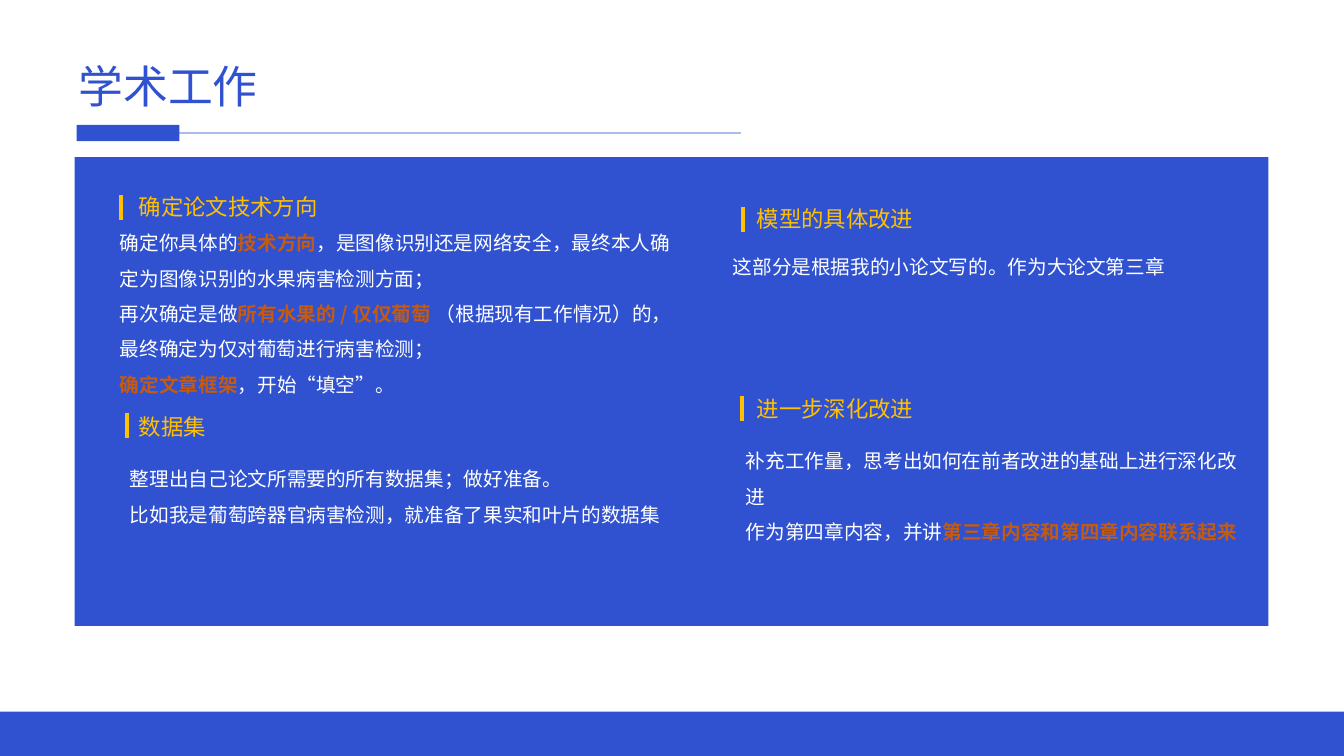
from lxml import etree
from pptx import Presentation
from pptx.dml.color import RGBColor
from pptx.enum.shapes import MSO_CONNECTOR as Conn, MSO_SHAPE as Shape
from pptx.enum.text import MSO_AUTO_SIZE as Fit
from pptx.oxml.ns import qn
from pptx.util import Inches, Pt

FONT = "Noto Sans CJK SC"
COLORS = {"blue": "3052D0", "pale": "ACBAEC", "gold": "FFC000",
          "white": "FFFFFF", "rust": "C55A11"}

# Body text: paragraphs of (text, highlighted) parts; "\n" is a line break.
TITLE = "学术工作"
BANDS = [(0.76, 1.24, 1.02, 0.16), (0.74, 1.56, 11.84, 4.65), (0, 7.06, 13.33, 0.44)]
TOPICS = [
    {"head": "确定论文技术方向", "at": (1.28, 1.87, 2.22, 0.32), "mark": (1.2, 1.93),
     "area": (1.09, 2.13, 5.81, 1.87),
     "body": [[("确定你具体的", False), ("技术方向", True),
               ("，是图像识别还是网络安全，最终本人确定为图像识别的水果病害检测方面；\n再次确定是做", False),
               ("所有水果的 / 仅仅葡萄 ", True),
               ("（根据现有工作情况）的，最终确定为仅对葡萄进行病害检测；", False)],
              [("确定文章框架", True), ("，开始“填空”。", False)]]},
    {"head": "数据集", "at": (1.28, 4.05, 2.05, 0.37), "mark": (1.26, 4.1),
     "area": (1.19, 4.47, 5.81, 0.81),
     "body": [[("整理出自己论文所需要的所有数据集；做好准备。", False)],
              [("比如我是葡萄跨器官病害检测，就准备了果实和叶片的数据集", False)]]},
    {"head": "模型的具体改进", "at": (7.41, 1.99, 2.76, 0.37), "mark": (7.37, 2.05),
     "area": (7.17, 2.36, 5.26, 0.45),
     "body": [[("这部分是根据我的小论文写的。作为大论文第三章", False)]]},
    {"head": "进一步深化改进", "at": (7.41, 3.87, 2.23, 0.37), "mark": (7.36, 3.93),
     "area": (7.3, 4.29, 5.26, 0.81),
     "body": [[("补充工作量，思考出如何在前者改进的基础上进行深化改进", False)],
              [("作为第四章内容，并讲", False), ("第三章内容和第四章内容联系起来", True)]]},
]
MARK = 0.25


def rgb(name):
    return RGBColor.from_string(COLORS[name])


def add_band(slide, box):
    band = slide.shapes.add_shape(Shape.RECTANGLE, *map(Inches, box))
    band.shadow.inherit = False
    band.fill.solid()
    band.fill.fore_color.rgb = rgb("blue")
    band.line.fill.background()


def add_line(slide, start, end, color, width):
    line = slide.shapes.add_connector(Conn.STRAIGHT, *map(Inches, start + end))
    line.line.color.rgb = rgb(color)
    line.line.width = Pt(width)
    etree.SubElement(line._element.spPr, qn("a:effectLst"))


def add_text(slide, box, paras, size, color, space=None):
    frame = slide.shapes.add_textbox(*map(Inches, box)).text_frame
    frame.word_wrap = True
    frame.auto_size = Fit.SHAPE_TO_FIT_TEXT
    for i, parts in enumerate(paras):
        para = frame.add_paragraph() if i else frame.paragraphs[0]
        para.line_spacing = space
        for text, strong in parts:
            for j, piece in enumerate(text.split("\n")):
                if j:
                    para.add_line_break()
                run = para.add_run()
                run.text = piece
                font = run.font
                font.size, font.name, font.bold = Pt(size), FONT, strong
                font.color.rgb = rgb("rust" if strong else color)
                asian = etree.SubElement(run._r.get_or_add_rPr(), qn("a:ea"))
                asian.set("typeface", FONT)


def main():
    deck = Presentation()
    deck.slide_width, deck.slide_height = Inches(13.33), Inches(7.5)
    slide = deck.slides.add_slide(deck.slide_layouts[6])
    add_text(slide, (0.68, 0.53, 4.11, 0.64), [[(TITLE, False)]], 32, "blue")
    add_line(slide, (0.76, 1.32), (7.35, 1.32), "pale", 2)
    for box in BANDS:
        add_band(slide, box)
    for topic in TOPICS:
        x, y = topic["mark"]
        add_text(slide, topic["at"], [[(topic["head"], False)]], 16, "gold")
        add_text(slide, topic["area"], topic["body"], 14, "white", 1.5)
        add_line(slide, (x, y), (x, y + MARK), "gold", 3)
    deck.save("out.pptx")


if __name__ == "__main__":
    main()
